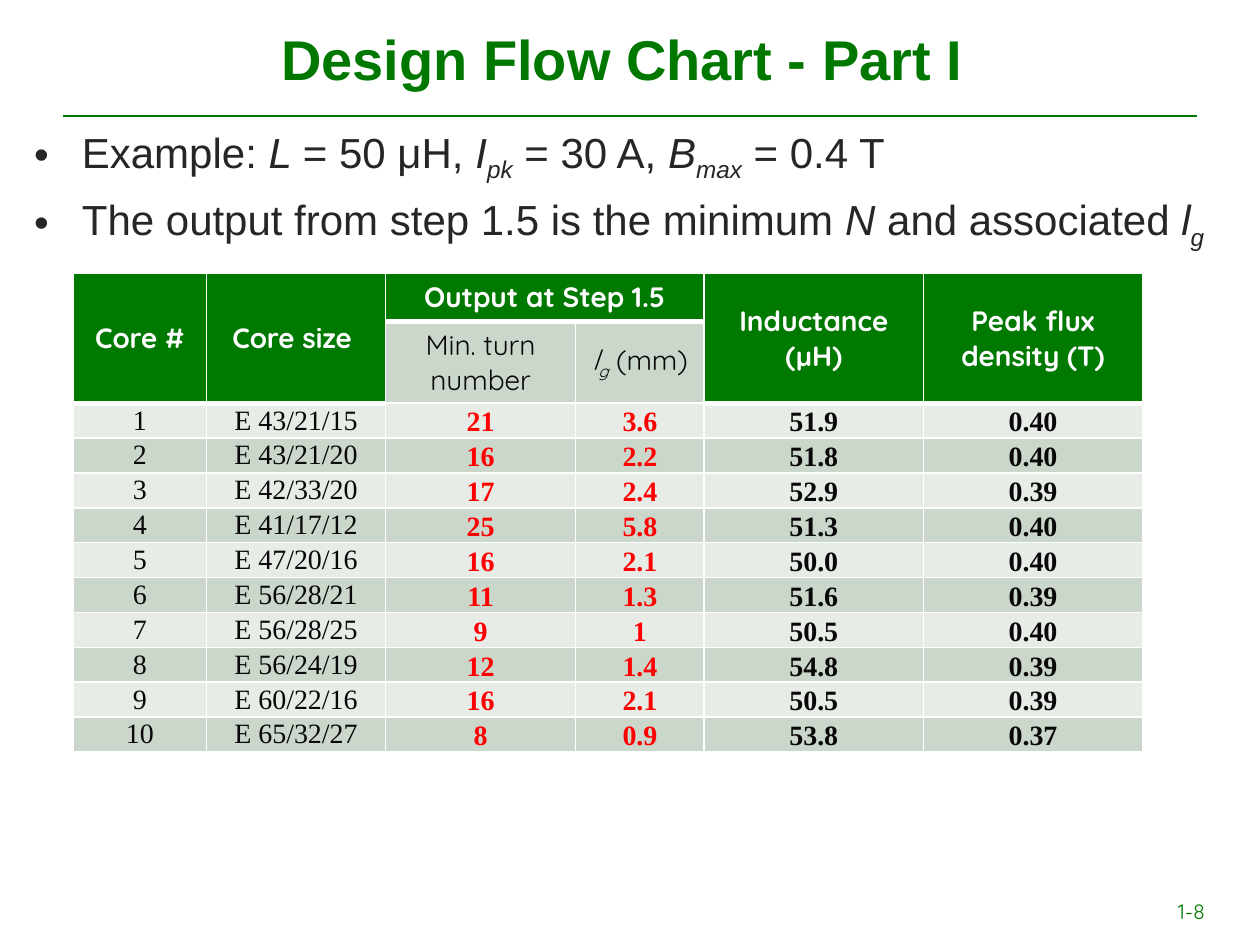
from lxml.etree import SubElement
from pptx import Presentation
from pptx.dml.color import RGBColor
from pptx.enum.shapes import MSO_CONNECTOR
from pptx.enum.text import MSO_ANCHOR, MSO_AUTO_SIZE, PP_ALIGN
from pptx.oxml.ns import qn
from pptx.util import Inches, Pt

TITLE_GREEN = RGBColor(0x00, 0x78, 0x00)
RULE_GREEN = RGBColor(0x00, 0x76, 0x00)
GREEN = RGBColor(0x00, 0x79, 0x00)
BODY_GRAY = RGBColor(0x26, 0x26, 0x26)
INK = RGBColor(0x08, 0x08, 0x08)
RED = RGBColor(0xFF, 0x00, 0x00)
WHITE = RGBColor(0xFF, 0xFF, 0xFF)
LIGHT_BAND = RGBColor(0xE7, 0xEC, 0xE7)
DARK_BAND = RGBColor(0xCC, 0xD7, 0xCC)

# Text pieces are (text, style); styles are plain, italic and italic subscript
PLAIN, ITALIC, SUBSCRIPT = range(3)
BULLETS = [
    [("Example: ", PLAIN), ("L ", ITALIC), ("= 50 μH, ", PLAIN),
     ("I", ITALIC), ("pk", SUBSCRIPT), (" = 30 A, ", PLAIN),
     ("B", ITALIC), ("max", SUBSCRIPT), (" = 0.4 T", PLAIN)],
    [("The output from step 1.5 is the minimum ", PLAIN), ("N", ITALIC),
     (" and associated ", PLAIN), ("l", ITALIC), ("g", SUBSCRIPT)],
]

COLUMN_WIDTHS = [1.06, 1.42, 1.51, 1.02, 1.74, 1.74]
HEADER_HEIGHTS = [0.38, 0.65]
DATA_HEIGHT = 0.25
OUTPUT_COLUMNS = (2, 3)
# (column, heading, last row, last column) of each merged heading
HEADINGS = [
    (0, "Core #", 1, 0),
    (1, "Core size ", 1, 1),
    (2, "Output at Step 1.5", 0, 3),
    (4, "Inductance (µH)", 1, 4),
    (5, "Peak flux density (T)", 1, 5),
]
SUBHEADINGS = [
    [("Min. turn number", PLAIN)],
    [("l", ITALIC), ("g", SUBSCRIPT), (" (mm)", PLAIN)],
]
CORES = [
    ("1", "E 43/21/15", "21", "3.6", "51.9", "0.40"),
    ("2", "E 43/21/20", "16", "2.2", "51.8", "0.40"),
    ("3", "E 42/33/20", "17", "2.4", "52.9", "0.39"),
    ("4", "E 41/17/12", "25", "5.8", "51.3", "0.40"),
    ("5", "E 47/20/16", "16", "2.1", "50.0", "0.40"),
    ("6", "E 56/28/21", "11", "1.3", "51.6", "0.39"),
    ("7", "E 56/28/25", "9", "1", "50.5", "0.40"),
    ("8", "E 56/24/19", "12", "1.4", "54.8", "0.39"),
    ("9", "E 60/22/16", "16", "2.1", "50.5", "0.39"),
    ("10", "E 65/32/27", "8", "0.9", "53.8", "0.37"),
]


def place(shape, left, top, width, height):
    shape.left, shape.top = Inches(left), Inches(top)
    shape.width, shape.height = Inches(width), Inches(height)


def set_font(para, name, size, color, bold=False):
    font = para.font
    font.name, font.size, font.bold = name, Pt(size), bold
    font.color.rgb = color


def add_spans(para, pieces):
    for text, style in pieces:
        span = para.add_run()
        span.text = text
        if style != PLAIN:
            span.font.italic = True
        if style == SUBSCRIPT:
            span._r.get_or_add_rPr().set("baseline", "-25000")


def add_bullet(para):
    properties = para._p.get_or_add_pPr()
    properties.set("marL", str(Inches(0.38)))
    properties.set("indent", str(-Inches(0.38)))
    SubElement(properties, qn("a:buChar")).set("char", "•")


def add_title(page, text):
    title = page.shapes.title
    place(title, 0.5, 0, 9, 0.92)
    frame = title.text_frame
    frame.auto_size = MSO_AUTO_SIZE.NONE
    frame.vertical_anchor = MSO_ANCHOR.MIDDLE
    para = frame.paragraphs[0]
    para.text = text
    para.alignment = PP_ALIGN.CENTER
    set_font(para, "Arial", 32, TITLE_GREEN, bold=True)


def add_rule(page):
    rule = page.shapes.add_connector(
        MSO_CONNECTOR.STRAIGHT, Inches(0.5), Inches(0.92), Inches(9.5), Inches(0.92))
    rule.line.color.rgb = RULE_GREEN
    rule.line.width = Pt(0.75)
    SubElement(rule._element.spPr, qn("a:effectLst"))


def add_bullets(page):
    body = page.placeholders[1]
    place(body, 0.17, 0.92, 9.67, 1.83)
    frame = body.text_frame
    frame.auto_size = MSO_AUTO_SIZE.NONE
    frame.margin_top = Inches(0.08)
    for index, pieces in enumerate(BULLETS):
        para = frame.add_paragraph() if index else frame.paragraphs[0]
        add_bullet(para)
        para.space_before = Pt(6 if index else 0)
        set_font(para, "Arial", 24, BODY_GRAY)
        add_spans(para, pieces)


def add_page_number(page, text):
    box = page.shapes.add_textbox(Inches(9.25), Inches(7.08), Inches(0.67), Inches(0.33))
    box.text_frame.word_wrap = True
    para = box.text_frame.paragraphs[0]
    para.text = text
    set_font(para, "Quicksand", 12, GREEN)


def set_borders(cell, top, bottom):
    properties = cell._tc.get_or_add_tcPr()
    for side, width in (("L", 1), ("R", 1), ("T", top), ("B", bottom)):
        line = SubElement(properties, qn(f"a:ln{side}"), w=str(Pt(width)))
        fill = SubElement(line, qn("a:solidFill"))
        SubElement(fill, qn("a:srgbClr"), val=str(WHITE))


def bottom_width(row, column):
    """Green headings end in a heavy line; all other cells in a thin one."""
    heavy = row == 0 or (row == 1 and column not in OUTPUT_COLUMNS)
    return 3 if heavy else 1


def fill_cell(cell, pieces, fill, font, color, bold):
    cell.fill.solid()
    cell.fill.fore_color.rgb = fill
    cell.vertical_anchor = MSO_ANCHOR.MIDDLE
    para = cell.text_frame.paragraphs[0]
    para.alignment = PP_ALIGN.CENTER
    set_font(para, font, 16, color, bold)
    add_spans(para, pieces)


def add_core_table(page):
    heights = HEADER_HEIGHTS + [DATA_HEIGHT] * len(CORES)
    table = page.shapes.add_table(
        len(heights), len(COLUMN_WIDTHS), Inches(0.58), Inches(2.17),
        Inches(sum(COLUMN_WIDTHS)), Inches(sum(heights))).table
    for column, width in zip(table.columns, COLUMN_WIDTHS):
        column.width = Inches(width)
    for row, height in enumerate(heights):
        table.rows[row].height = Inches(height)
        for column in range(len(COLUMN_WIDTHS)):
            top = bottom_width(row - 1, column) if row else 1
            set_borders(table.cell(row, column), top, bottom_width(row, column))

    # Headings
    for column, text, last_row, last_column in HEADINGS:
        cell = table.cell(0, column)
        cell.merge(table.cell(last_row, last_column))
        fill_cell(cell, [(text, PLAIN)], GREEN, "Quicksand", WHITE, True)
    for column, pieces in zip(OUTPUT_COLUMNS, SUBHEADINGS):
        fill_cell(table.cell(1, column), pieces, DARK_BAND, "Quicksand", INK, False)

    # Core data
    for index, core in enumerate(CORES):
        band = DARK_BAND if index % 2 else LIGHT_BAND
        for column, text in enumerate(core):
            cell = table.cell(index + len(HEADER_HEIGHTS), column)
            is_result = column >= OUTPUT_COLUMNS[0]
            color = RED if column in OUTPUT_COLUMNS else INK
            fill_cell(cell, [(text, PLAIN)], band, "Times New Roman", color, is_result)
            cell.margin_left = cell.margin_right = Inches(0.01 if is_result else 0.07)
            cell.margin_top = Inches(0.01 if is_result else 0)
            cell.margin_bottom = 0
            if is_result:
                cell.vertical_anchor = MSO_ANCHOR.BOTTOM


def main():
    deck = Presentation()
    deck.slide_width, deck.slide_height = Inches(10), Inches(7.5)
    page = deck.slides.add_slide(deck.slide_layouts[1])
    add_rule(page)
    add_title(page, "Design Flow Chart - Part I ")
    add_page_number(page, "1-8")
    add_bullets(page)
    add_core_table(page)
    deck.save("out.pptx")


if __name__ == "__main__":
    main()
